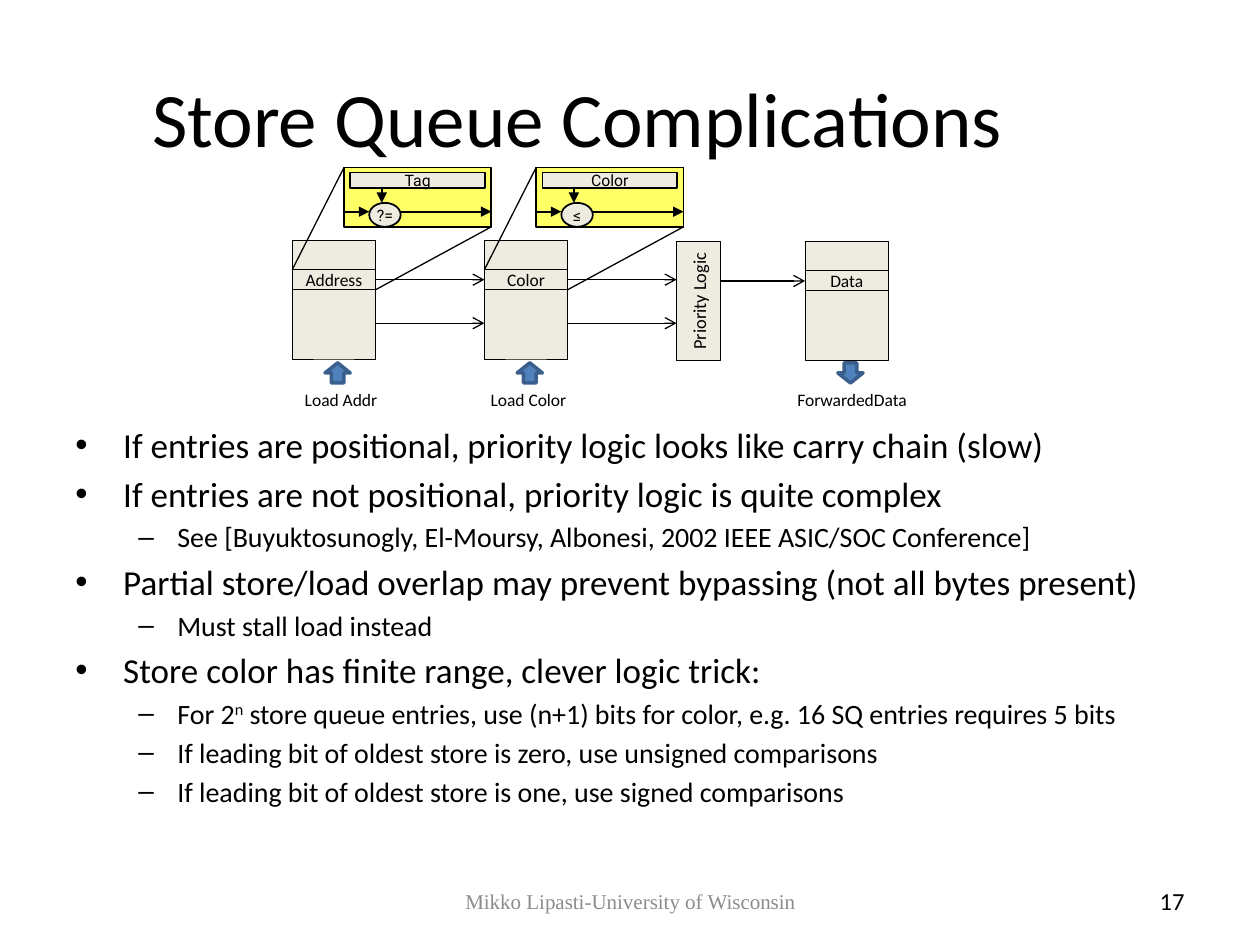
from lxml import etree
from pptx import Presentation
from pptx.dml.color import RGBColor
from pptx.enum.shapes import MSO_CONNECTOR, MSO_SHAPE
from pptx.enum.text import MSO_ANCHOR, PP_ALIGN
from pptx.oxml.ns import qn
from pptx.util import Inches, Pt

RECT, OVAL = MSO_SHAPE.RECTANGLE, MSO_SHAPE.OVAL
UP, DOWN = MSO_SHAPE.UP_ARROW, MSO_SHAPE.DOWN_ARROW
STRAIGHT = MSO_CONNECTOR.STRAIGHT
LEFT, CENTER, RIGHT = PP_ALIGN.LEFT, PP_ALIGN.CENTER, PP_ALIGN.RIGHT
TOP, MIDDLE = MSO_ANCHOR.TOP, MSO_ANCHOR.MIDDLE
SIDE_LEFT, SIDE_RIGHT = 1, 3

BLACK, BEIGE, YELLOW = "000000", "EEECE1", "FFFF66"
BLUE, DARK_BLUE, GREY = "4F81BD", "3A5F8C", "8C8C8C"

# Diagram grid
PITCH = 1.525                # from one searched queue column to the next
COL_W, COL_H = 0.66, 0.94    # queue column
ENTRY_Y, ENTRY_H = 0.23, 0.16  # highlighted entry inside a column

BULLETS = [
    (0, "If entries are positional, priority logic looks like carry chain (slow)"),
    (0, "If entries are not positional, priority logic is quite complex"),
    (1, "See [Buyuktosunogly, El-Moursy, Albonesi, 2002 IEEE ASIC/SOC Conference]"),
    (0, "Partial store/load overlap may prevent bypassing (not all bytes present)"),
    (1, "Must stall load instead"),
    (0, "Store color has finite range, clever logic trick:"),
    (1, "For 2^n^ store queue entries, use (n+1) bits for color, "
        "e.g. 16 SQ entries requires 5 bits"),
    (1, "If leading bit of oldest store is zero, use unsigned comparisons"),
    (1, "If leading bit of oldest store is one, use signed comparisons"),
]
# Per level: size, left margin, hanging indent, bullet
LEVELS = [(20, 0.38, -0.38, "•"), (16, 0.81, -0.31, "–")]


def rgb(value):
    return RGBColor.from_string(value)


def write(p, text, size=10, font="Calibri", color=BLACK, align=CENTER):
    """Write text into a paragraph; parts between ^ marks are superscript."""
    p.alignment = align
    for i, part in enumerate(text.split("^")):
        r = p.add_run()
        r.text = part
        r.font.size, r.font.name = Pt(size), font
        r.font.color.rgb = rgb(color)
        if i % 2:
            r.font._element.set("baseline", "30000")


def text_box(slide, x, y, w, h, text, anchor=MIDDLE, wrap=True, **fmt):
    tf = slide.shapes.add_textbox(*map(Inches, (x, y, w, h))).text_frame
    tf.word_wrap, tf.vertical_anchor = wrap, anchor
    write(tf.paragraphs[0], text, **fmt)


def shape(slide, kind, x, y, w, h, fill=BEIGE, line=BLACK, weight=0.5,
          text=None, wrap=True, inset=0, **fmt):
    sp = slide.shapes.add_shape(kind, *map(Inches, (x, y, w, h)))
    sp.shadow.inherit = False
    sp.fill.solid()
    sp.fill.fore_color.rgb = rgb(fill)
    sp.line.color.rgb = rgb(line)
    sp.line.width = Pt(weight)
    if text:
        tf = sp.text_frame
        tf.word_wrap, tf.vertical_anchor = wrap, MIDDLE
        tf.margin_left = tf.margin_right = Inches(inset)
        tf.margin_top = tf.margin_bottom = 0
        write(tf.paragraphs[0], text, **fmt)
    return sp


def line(slide, x1, y1, x2, y2, weight=0.75, head=None, begin=None, end=None):
    cn = slide.shapes.add_connector(STRAIGHT, *map(Inches, (x1, y1, x2, y2)))
    cn.line.color.rgb = rgb(BLACK)
    cn.line.width = Pt(weight)
    if head:
        etree.SubElement(cn.line._get_or_add_ln(), qn("a:tailEnd"), type=head)
    etree.SubElement(cn._element.spPr, qn("a:effectLst"))
    if begin:
        cn.begin_connect(begin, SIDE_RIGHT)
    if end:
        cn.end_connect(end, SIDE_LEFT)


def queue_column(slide, x, y, label):
    """Draw a column of queue entries and return its highlighted entry."""
    shape(slide, RECT, x, y, COL_W, COL_H)
    return shape(slide, RECT, x, y + ENTRY_Y, COL_W, ENTRY_H, text=label)


def comparator(slide, x, y, w, h, label, symbol):
    """Draw the enlarged comparison logic of one entry."""
    d_w, d_h = 0.25, 0.19
    d_x, wire_y, stem_x = x + 0.2, y + 0.35, x + 0.3
    small = dict(weight=1, size=9, font="Roboto", wrap=False)
    shape(slide, RECT, x, y, w, h, fill=YELLOW, weight=1)
    line(slide, x, wire_y, d_x, wire_y, 1, "triangle")
    shape(slide, OVAL, d_x, y + h - d_h, d_w, d_h, text=symbol, **small)
    line(slide, d_x + d_w, wire_y, x + w, wire_y, 1, "triangle")
    shape(slide, RECT, x + 0.05, y + 0.04, w - 0.1, 0.12, text=label, **small)
    line(slide, stem_x, y + 0.16, stem_x, y + h - d_h, 1, "triangle")


def zoomed_column(slide, x, y, label, detail, symbol):
    """Draw a queue column with its entry enlarged above it."""
    entry = queue_column(slide, x, y, label)
    zx, zy, zw, zh = x + 0.41, y - 0.58, 1.17, 0.47
    comparator(slide, zx, zy, zw, zh, detail, symbol)
    line(slide, zx, zy, x, y + ENTRY_Y)
    line(slide, zx + zw, zy + zh, x + COL_W, y + ENTRY_Y + ENTRY_H)
    return entry


def port(slide, x, y, kind, label, label_x, label_w):
    """Draw a block arrow with its caption underneath."""
    shape(slide, kind, x + 0.26, y, 0.2, 0.16, BLUE, DARK_BLUE, 2)
    text_box(slide, label_x, y + 0.16, label_w, 0.27, label,
             anchor=TOP, wrap=False, align=LEFT)


def diagram(slide, x, y):
    """Draw the store queue search, left to right."""
    color_x, logic_x, data_x = x + PITCH, x + 2 * PITCH, x + 4.07
    logic_w, low_y = 0.35, y + 0.655
    entry_mid = y + ENTRY_Y + ENTRY_H / 2

    # Queue columns and priority logic
    address = zoomed_column(slide, x, y, "Address", "Tag", "?=")
    color = zoomed_column(slide, color_x, y, "Color", "Color", "≤")
    data = queue_column(slide, data_x, y + 0.01, "Data")
    logic = shape(slide, RECT, logic_x, y + 0.01, logic_w, COL_H,
                  text="Priority Logic", size=10.5, inset=0.05)
    logic.text_frame._txBody.bodyPr.set("vert", "vert270")

    # Match signals
    line(slide, x + COL_W, entry_mid, color_x, entry_mid, head="arrow",
         begin=address, end=color)
    line(slide, color_x + COL_W, entry_mid, logic_x, entry_mid, head="arrow",
         begin=color)
    line(slide, logic_x + logic_w, entry_mid + 0.01, data_x, entry_mid + 0.01,
         head="arrow", end=data)
    for start, stop in ((x, color_x), (color_x, logic_x)):
        line(slide, start + COL_W, low_y, stop, low_y, head="arrow")

    # Inputs and output
    port_y = y + 0.97
    port(slide, x, port_y, UP, "Load Addr", x, 0.78)
    port(slide, color_x, port_y, UP, "Load Color", color_x - 0.05, 0.81)
    port(slide, data_x, port_y, DOWN, "ForwardedData", data_x - 0.16, 1.09)


def bullet_list(slide, x, y, w, h):
    tf = slide.shapes.add_textbox(*map(Inches, (x, y, w, h))).text_frame
    tf.word_wrap = True
    for i, (level, text) in enumerate(BULLETS):
        size, margin, indent, mark = LEVELS[level]
        p = tf.add_paragraph() if i else tf.paragraphs[0]
        p.level = level
        p.space_before = Pt(0.2 * size if i else 0)
        pPr = p._p.get_or_add_pPr()
        pPr.set("marL", str(Inches(margin)))
        pPr.set("indent", str(Inches(indent)))
        etree.SubElement(pPr, qn("a:buFont"), typeface="Arial")
        etree.SubElement(pPr, qn("a:buChar"), char=mark)
        write(p, text, size=size, align=LEFT)


def title(slide, x, y, w, h, text):
    sp = slide.shapes.title
    sp.left, sp.top, sp.width, sp.height = map(Inches, (x, y, w, h))
    sp.text_frame.vertical_anchor = MIDDLE
    write(sp.text_frame.paragraphs[0], text, size=44)


def footer(slide, y, h):
    text_box(slide, 3.42, y, 3.17, h, "Mikko Lipasti-University of Wisconsin",
             size=12, font="Times New Roman", color=GREY)
    text_box(slide, 8.33, y, 1.17, h, "17", size=14, align=RIGHT)


def main():
    prs = Presentation()
    prs.slide_width, prs.slide_height = Inches(10), Inches(7.5)
    slide = prs.slides.add_slide(prs.slide_layouts[5])
    title(slide, 0.5, 0.3, 8.17, 1.25, "Store Queue Complications")
    bullet_list(slide, 0.5, 3.31, 9, 3.69)
    footer(slide, 6.95, 0.4)
    diagram(slide, 2.32, 1.91)
    prs.save("out.pptx")


if __name__ == "__main__":
    main()
